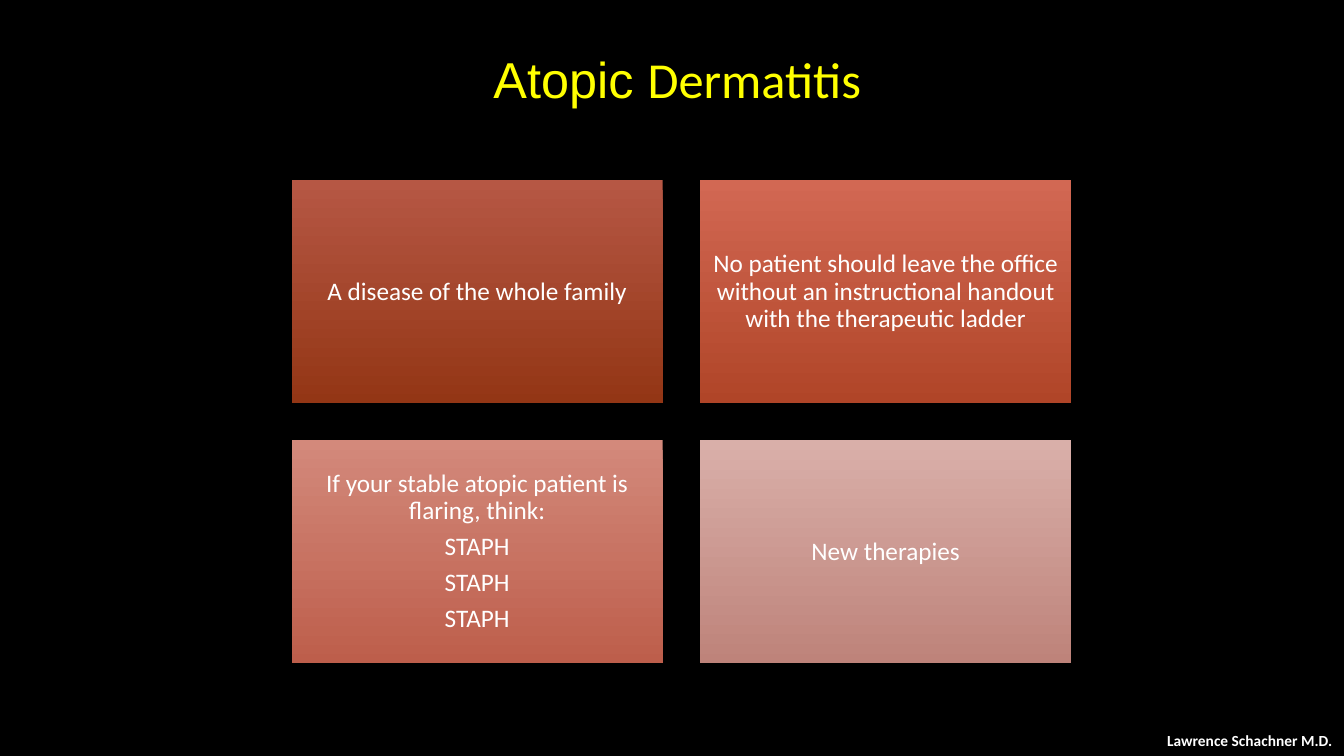
from pptx import Presentation
from pptx.dml.color import RGBColor
from pptx.enum.shapes import MSO_SHAPE as Shape
from pptx.enum.text import MSO_ANCHOR as Anchor, MSO_AUTO_SIZE as AutoSize, PP_ALIGN as Align
from pptx.util import Inches, Pt


def rgb(value):
    return RGBColor.from_string(value)


def add_text(p, text, font="Calibri", size=18, color="FFFFFF", bold=False):
    r = p.add_run()
    r.text = text
    r.font.name, r.font.size, r.font.bold = font, Pt(size), bold
    r.font.color.rgb = rgb(color)


class Deck:
    """Builds slides on a grid of 100 columns by 100 rows."""

    def __init__(self, width, height, background):
        self.prs = Presentation()
        self.prs.slide_width, self.prs.slide_height = Inches(width), Inches(height)
        self.s = self.prs.slides.add_slide(self.prs.slide_layouts[6])
        self.s.background.fill.solid()
        self.s.background.fill.fore_color.rgb = rgb(background)

    def box(self, col, row, cols, rows):
        x, y = self.prs.slide_width / 100, self.prs.slide_height / 100
        return int(col * x), int(row * y), int(cols * x), int(rows * y)

    def title(self, place, runs, **style):
        tf = self.s.shapes.add_textbox(*self.box(*place)).text_frame
        tf.word_wrap, tf.vertical_anchor = True, Anchor.MIDDLE
        p = tf.paragraphs[0]
        p.alignment = Align.CENTER
        for text, font in runs:
            add_text(p, text, font=font, **style)

    def card(self, place, lines, top, bottom):
        sp = self.s.shapes.add_shape(Shape.RECTANGLE, *self.box(*place))
        sp.shadow.inherit = False
        sp.line.fill.background()
        sp.fill.gradient()
        sp.fill.gradient_angle = 270
        for stop, color, position in zip(sp.fill.gradient_stops, (top, bottom), (0, 1)):
            stop.color.rgb, stop.position = rgb(color), position
        tf = sp.text_frame
        tf.word_wrap, tf.vertical_anchor = True, Anchor.MIDDLE
        tf.margin_left = tf.margin_right = tf.margin_top = tf.margin_bottom = Inches(0.07)
        for i, line in enumerate(lines):
            p = tf.add_paragraph() if i else tf.paragraphs[0]
            p.alignment, p.line_spacing, p.space_after = Align.CENTER, 0.9, Pt(6.3)
            add_text(p, line)

    def credit(self, place, text, **style):
        tf = self.s.shapes.add_textbox(*self.box(*place)).text_frame
        tf.word_wrap, tf.auto_size = False, AutoSize.SHAPE_TO_FIT_TEXT
        add_text(tf.paragraphs[0], text, **style)


CARDS = [
    (["A disease of the whole family"], "B65744", "933615"),
    (["No patient should leave the office without an instructional handout "
      "with the therapeutic ladder"], "D26853", "B04528"),
    (["If your stable atopic patient is flaring, think:"] + ["STAPH"] * 3, "D3897B", "BD5E4B"),
    (["New therapies"], "D9AFA9", "BE837A"),
]


def main():
    deck = Deck(13.33, 7.5, "000000")
    for i, (lines, top, bottom) in enumerate(CARDS):
        row, col = divmod(i, 2)
        deck.card((21.7 + col * 30.4, 23.87 + row * 34.4, 27.6, 29.5), lines, top, bottom)
    deck.title((14.55, 2, 71.7, 16.7), [("Atopic ", "Arial"), ("Dermatitis", "Calibri")],
               size=36, color="FFFF00")
    deck.credit((86.1, 96, 13.95, 3.87), "Lawrence Schachner M.D.", size=11, bold=True)
    deck.prs.save("out.pptx")


if __name__ == "__main__":
    main()
